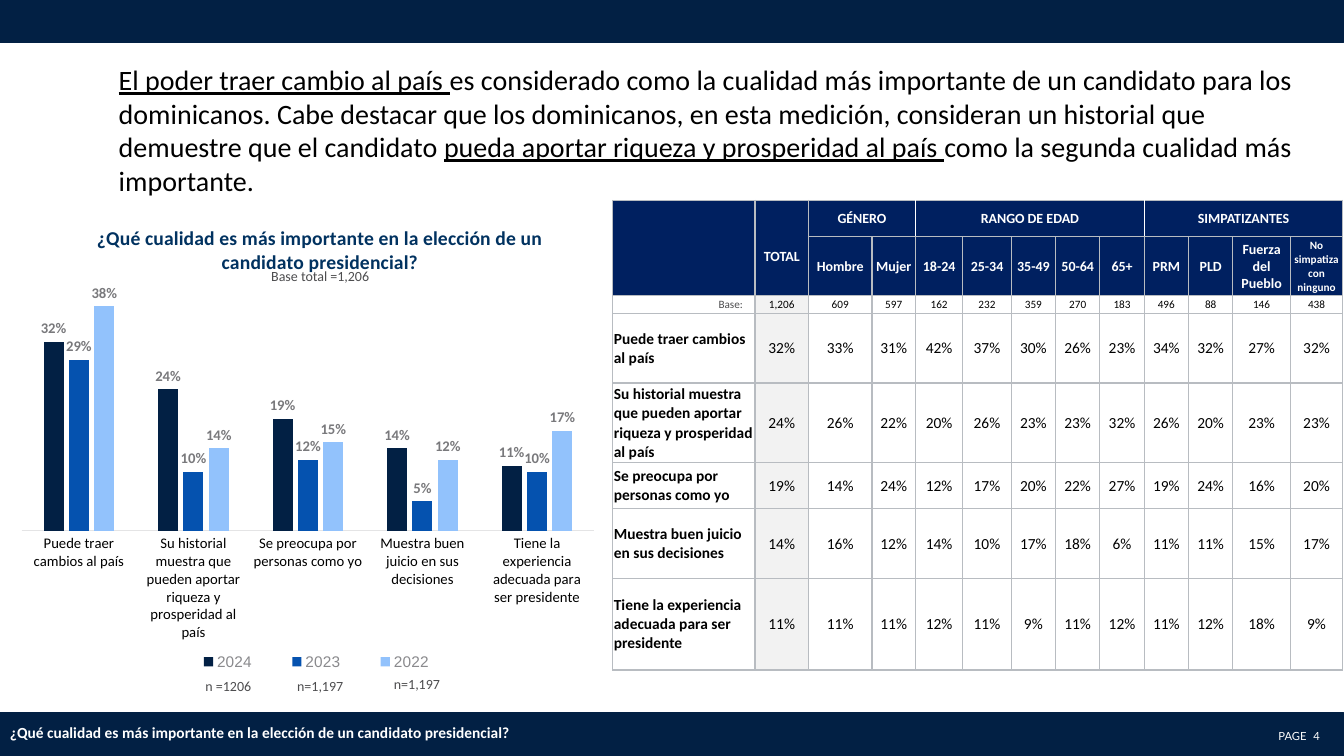
"""Build a survey slide with a headline, a column chart and a table of results by group."""
from dataclasses import dataclass
from lxml.etree import SubElement as Sub
from pptx import Presentation
from pptx.chart.chart import Chart
from pptx.chart.data import CategoryChartData as Data
from pptx.dml.color import RGBColor as Rgb
from pptx.enum.chart import XL_CHART_TYPE as Kind, XL_LABEL_POSITION as Spot
from pptx.enum.chart import XL_LEGEND_POSITION as Side, XL_TICK_MARK as Tick
from pptx.enum.shapes import MSO_SHAPE as Form
from pptx.enum.text import MSO_ANCHOR as Anchor, PP_ALIGN as Align
from pptx.oxml import parse_xml
from pptx.oxml.ns import nsdecls, qn
from pptx.table import Table
from pptx.text.text import TextFrame
from pptx.util import Inches, Pt

NAVY = Rgb(0x02, 0x20, 0x44)
BLUE = Rgb(0x05, 0x52, 0xAF)
SKY = Rgb(0x92, 0xC2, 0xFC)
HEAD = Rgb(0x00, 0x20, 0x60)
TITLE = Rgb(0x01, 0x32, 0x60)
WHITE = Rgb(0xFF, 0xFF, 0xFF)
BLACK = Rgb(0x00, 0x00, 0x00)
PALE = Rgb(0xF2, 0xF2, 0xF2)
EDGE = Rgb(0xB8, 0xBC, 0xC1)
AXIS = Rgb(0xE4, 0xE4, 0xE5)
DARK = Rgb(0x4D, 0x4D, 0x4F)
MID = Rgb(0x79, 0x79, 0x7C)
SOFT = Rgb(0x8A, 0x8A, 0x8D)

WIDE, HIGH = Inches(13.333), Inches(7.5)
ASK = "¿Qué cualidad es más importante en la elección de un candidato presidencial?"


@dataclass
class Box:
    """Left, top, width and height as percent of the slide."""
    left: float
    top: float
    width: float
    height: float

    def span(self) -> tuple[int, int, int, int]:
        """Return the box in slide units."""
        return across(self.left), down(self.top), across(self.width), down(self.height)


@dataclass
class Note:
    """A text, its place and its format; underscores mark underlined parts."""
    text: str
    box: Box
    size: float = 10
    color: Rgb = DARK
    bold: bool = False
    align: Align = Align.LEFT
    font: str = "Calibri"
    tight: bool = False


@dataclass
class Trait:
    """A quality with its votes by group and its 2023 and 2022 totals."""
    name: str
    votes: str
    past: tuple[int, int]


@dataclass
class Group:
    """A header that covers several columns."""
    name: str
    first: int
    last: int


BARS = [Box(0, -0.4, 100, 6), Box(0, 94.27, 100, 6)]
NOTES = [
    Note("PAGE", Box(87.4, 95.6, 9.82, 3.2), 8, WHITE, align=Align.RIGHT, font="Lato", tight=True),
    Note("4", Box(97.72, 95.6, 1.28, 3.2), 8, WHITE, font="Lato", tight=True),
    Note(ASK, Box(0, 94.93, 94.35, 3.87), 11, WHITE, True),
    Note("_El poder traer cambio al país _es considerado como la cualidad más importante de un "
         "candidato para los dominicanos. Cabe destacar que los dominicanos, en esta medición, "
         "consideran un historial que demuestre que el candidato _pueda aportar riqueza y "
         "prosperidad al país _como la segunda cualidad más importante.",
         Box(8.1, 7.6, 89.7, 19.33), 20, BLACK),
    Note("Base total =1,206", Box(19.13, 34.67, 9.38, 3.6), align=Align.CENTER),
    Note("n =1206", Box(12.3, 88.93, 9.38, 3.6), align=Align.CENTER),
    Note("n=1,197", Box(19.13, 88.93, 9.38, 3.6), align=Align.CENTER),
    Note("n=1,197", Box(26.33, 88.67, 9.38, 3.6), align=Align.CENTER),
]
TRAITS = [
    Trait("Puede traer cambios al país", "32 33 31 42 37 30 26 23 34 32 27 32", (29, 38)),
    Trait("Su historial muestra que pueden aportar riqueza y prosperidad al país",
          "24 26 22 20 26 23 23 32 26 20 23 23", (10, 14)),
    Trait("Se preocupa por personas como yo", "19 14 24 12 17 20 22 27 19 24 16 20", (12, 15)),
    Trait("Muestra buen juicio en sus decisiones", "14 16 12 14 10 17 18 6 11 11 15 17", (5, 12)),
    Trait("Tiene la experiencia adecuada para ser presidente",
          "11 11 11 12 11 9 11 12 11 12 18 9", (10, 17)),
]
YEARS = {"2024": NAVY, "2023": BLUE, "2022": SKY}
GROUPS = [Group("GÉNERO", 2, 3), Group("RANGO DE EDAD", 4, 8), Group("SIMPATIZANTES", 9, 12)]
HEADS = ["Hombre", "Mujer", "18-24", "25-34", "35-49", "50-64", "65+", "PRM", "PLD",
         "Fuerza del Pueblo", "No simpatiza con ninguno"]
BASE = "1,206 609 597 162 232 359 270 183 496 88 146 438".split()
COLS = [10.58, 3.98, 4.73, 3.23, 3.53, 3.6, 3.3, 3.3, 3.3, 3.3, 3.3, 4.28, 3.9]
ROWS = [4.8, 7.73, 2.4, 9.2, 10.53, 6.13, 9.2, 12.13]


def across(part: float) -> int:
    """Turn a percent of the slide's width into a length."""
    return round(WIDE * part / 100)


def down(part: float) -> int:
    """Turn a percent of the slide's height into a length."""
    return round(HIGH * part / 100)


def style(font, *, size: float, color: Rgb, bold: bool = False, name: str = "Calibri") -> None:
    """Set the look of a font."""
    font.size, font.bold, font.name = Pt(size), bold, name
    font.color.rgb = color


def write(frame: TextFrame, text: str, *, align: Align = Align.CENTER, **look) -> None:
    """Fill a frame with one paragraph, underlining what stands between underscores."""
    line = frame.paragraphs[0]
    line.alignment = align
    for at, part in enumerate(text.split("_")):
        if part:
            run = line.add_run()
            run.text = part
            style(run.font, **look)
            run.font.underline = at % 2 == 1


def draw_bar(slide, box: Box) -> None:
    """Draw a navy band."""
    bar = slide.shapes.add_shape(Form.RECTANGLE, *box.span())
    bar.shadow.inherit = False
    bar.fill.solid()
    bar.fill.fore_color.rgb = bar.line.color.rgb = NAVY
    bar.line.width = Pt(0.75)


def draw_note(slide, note: Note) -> None:
    """Draw a text box."""
    frame = slide.shapes.add_textbox(*note.box.span()).text_frame
    frame.word_wrap = True
    if note.tight:
        frame.margin_left = frame.margin_right = frame.margin_top = frame.margin_bottom = 0
        frame.vertical_anchor = Anchor.MIDDLE
        frame.paragraphs[0].line_spacing = 1.2
    write(frame, note.text, align=note.align, size=note.size, color=note.color,
          bold=note.bold, name=note.font)


def place(node, index: int, inner: bool = False, **parts: float) -> None:
    """Give a chart part a fixed place, in shares of the chart."""
    for old in node.findall(qn("c:layout")):
        node.remove(old)
    frame = parse_xml(f"<c:layout {nsdecls('c')}><c:manualLayout/></c:layout>")
    if inner:
        Sub(frame[0], qn("c:layoutTarget"), val="inner")
    for key in "xy":
        Sub(frame[0], qn(f"c:{key}Mode"), val="edge")
    for key, part in parts.items():
        Sub(frame[0], qn(f"c:{key}"), val=str(part))
    node.insert(index, frame)


def draw_chart(slide, box: Box) -> Chart:
    """Draw the columns by quality and year."""
    data = Data(number_format="0%")
    data.categories = [trait.name for trait in TRAITS]
    totals = [(int(trait.votes.split()[0]), *trait.past) for trait in TRAITS]
    for year, vals in zip(YEARS, zip(*totals)):
        data.add_series(year, [val / 100 for val in vals])
    chart = slide.shapes.add_chart(Kind.COLUMN_CLUSTERED, *box.span(), data).chart
    style(chart.font, size=10, color=DARK, name="Arial")
    write(chart.chart_title.text_frame, ASK, size=14, color=TITLE, bold=True)
    chart.chart_title.include_in_layout = False
    place(chart.chart_title._element, 1, x=0.155, y=0.11)
    plot = chart.plots[0]
    plot.gap_width, plot.overlap, plot.vary_by_categories = 219, -27, False
    plot.has_data_labels = True
    tags = plot.data_labels
    tags.show_value, tags.position = True, Spot.OUTSIDE_END
    tags.number_format, tags.number_format_is_linked = "0%", False
    style(tags.font, size=10.5, color=MID, bold=True)
    for bars, color in zip(plot.series, YEARS.values()):
        bars.format.fill.solid()
        bars.format.fill.fore_color.rgb = color
    base, scale = chart.category_axis, chart.value_axis
    base.major_tick_mark = base.minor_tick_mark = Tick.NONE
    base.format.line.color.rgb, base.format.line.width = AXIS, Pt(0.75)
    style(base.tick_labels.font, size=10.5, color=BLACK)
    scale.visible = scale.has_major_gridlines = False
    scale.minimum_scale, scale.maximum_scale = 0, 0.4
    chart.has_legend = True
    chart.legend.position, chart.legend.include_in_layout = Side.RIGHT, False
    style(chart.legend.font, size=11, color=SOFT, name="Arial")
    place(chart.legend._element, 1, x=0.28, y=0.9, w=0.49, h=0.06)
    place(chart._chartSpace.chart.plotArea, 0, True, x=0.036, y=0.248, w=0.95, h=0.439)
    return chart


def dress(cell, fill: Rgb, row: int, col: int) -> None:
    """Set a cell's fill, margins and borders."""
    cell.fill.solid()
    cell.fill.fore_color.rgb = fill
    cell.vertical_anchor = Anchor.MIDDLE
    cell.margin_left = cell.margin_right = cell.margin_top = Inches(0.01)
    cell.margin_bottom = 0
    light = {"L": row == 0 and col > 3, "R": row == 0 and 2 <= col < 9}
    for at, side in enumerate("LRTB"):
        color = WHITE if light.get(side) else EDGE
        cell._tc.get_or_add_tcPr().insert(at, parse_xml(
            f'<a:ln{side} {nsdecls("a")} w="12700"><a:solidFill><a:srgbClr val="{color}"/>'
            f'</a:solidFill></a:ln{side}>'))


def draw_table(slide, box: Box) -> Table:
    """Draw the table of votes by group."""
    table = slide.shapes.add_table(len(ROWS), len(COLS), *box.span()).table
    table.first_row = table.horz_banding = False
    for col, part in zip(table.columns, COLS):
        col.width = across(part)
    for row, part in zip(table.rows, ROWS):
        row.height = down(part)
    for row in range(len(ROWS)):
        for col in range(len(COLS)):
            fill = HEAD if row < 2 else PALE if col == 1 else WHITE
            dress(table.cell(row, col), fill, row, col)
    for col in range(2):
        table.cell(0, col).merge(table.cell(1, col))
    look = dict(size=10, color=WHITE, bold=True)
    write(table.cell(0, 1).text_frame, "TOTAL", **look)
    table.cell(0, 1).margin_top = Inches(0.18)
    for group in GROUPS:
        table.cell(0, group.first).merge(table.cell(0, group.last))
        write(table.cell(0, group.first).text_frame, group.name, **look)
    for col, head in enumerate(HEADS, 2):
        write(table.cell(1, col).text_frame, head, **look | {"size": 8 if col == 12 else 10})
    write(table.cell(2, 0).text_frame, "Base:", align=Align.RIGHT, size=8, color=DARK)
    table.cell(2, 0).margin_right = Inches(0.12)
    for col, count in enumerate(BASE, 1):
        write(table.cell(2, col).text_frame, count, size=8, color=BLACK)
    for row, trait in enumerate(TRAITS, 3):
        write(table.cell(row, 0).text_frame, trait.name, align=Align.LEFT, size=11,
              color=BLACK, bold=True)
        for col, vote in enumerate(trait.votes.split(), 1):
            write(table.cell(row, col).text_frame, f"{vote}%", size=11, color=BLACK)
    return table


def main() -> None:
    """Build and save the slide."""
    deck = Presentation()
    deck.slide_width, deck.slide_height = WIDE, HIGH
    slide = deck.slides.add_slide(deck.slide_layouts[6])
    for bar in BARS:
        draw_bar(slide, bar)
    draw_chart(slide, Box(0, 21.33, 44.85, 71.2))
    draw_table(slide, Box(45.6, 26.53, sum(COLS), sum(ROWS)))
    for note in NOTES:
        draw_note(slide, note)
    deck.save("out.pptx")


if __name__ == "__main__":
    main()
